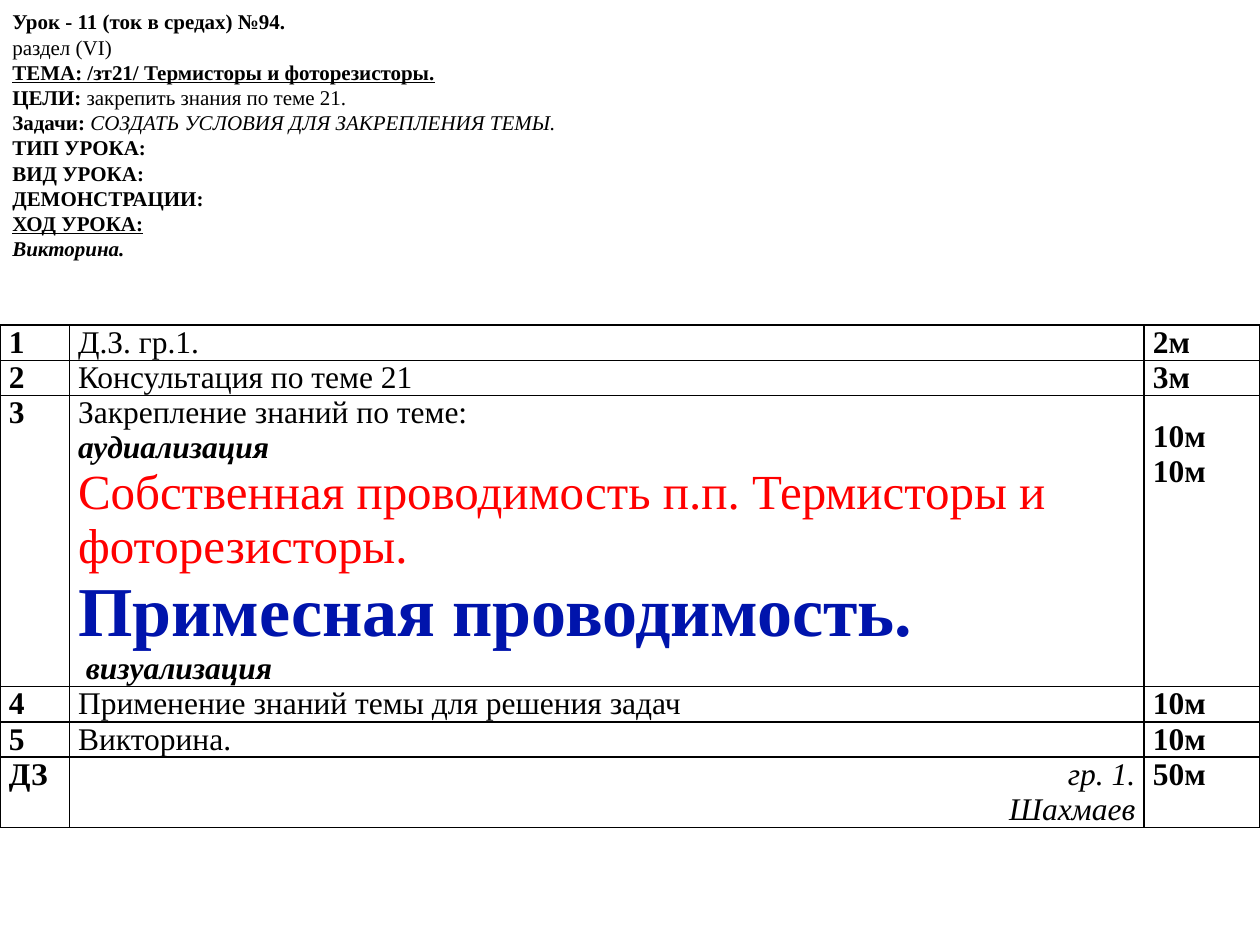
from lxml import etree
from pptx import Presentation
from pptx.dml.color import RGBColor
from pptx.enum.text import MSO_ANCHOR, PP_ALIGN
from pptx.oxml.ns import qn
from pptx.util import Inches, Pt

TOP = MSO_ANCHOR.TOP
LEFT, RIGHT = PP_ALIGN.LEFT, PP_ALIGN.RIGHT
BLACK = RGBColor(0, 0, 0)
WHITE = RGBColor(255, 255, 255)
RED = RGBColor(255, 0, 0)
BLUE = RGBColor(0, 0x14, 0xAC)
FONT = "Times New Roman"

PLAIN = {}
BOLD = {"bold": True}
ITALIC = {"italic": True}
BOLD_ITALIC = {"bold": True, "italic": True}
HEADING = {"bold": True, "underline": True}
RED_TOPIC = {"size": Pt(28), "color": RED}
BLUE_TOPIC = {"size": Pt(40), "color": BLUE, "bold": True}

LESSON_PLAN = [
    [("Урок - 11 (ток в средах) №94.", BOLD)],
    [("раздел (VI)", PLAIN)],
    [("ТЕМА: /зт21/ Термисторы и фоторезисторы.", HEADING)],
    [("ЦЕЛИ:", BOLD), (" закрепить знания по теме 21.", PLAIN)],
    [("Задачи: ", BOLD), ("СОЗДАТЬ УСЛОВИЯ ДЛЯ ЗАКРЕПЛЕНИЯ ТЕМЫ.", ITALIC)],
    [("ТИП УРОКА:", BOLD)],
    [("ВИД УРОКА:", BOLD)],
    [("ДЕМОНСТРАЦИИ:", BOLD)],
    [("ХОД УРОКА:", HEADING)],
    [("Викторина.", BOLD_ITALIC)],
]
REINFORCEMENT = [
    [("Закрепление знаний по теме:", PLAIN)],
    [("аудиализация", BOLD_ITALIC)],
    [("Собственная проводимость п.п. Термисторы и фоторезисторы.", RED_TOPIC)],
    [("Примесная проводимость.", BLUE_TOPIC)],
    [(" визуализация", BOLD_ITALIC)],
]
HOMEWORK = [[("гр. 1.", ITALIC)], [("Шахмаев", ITALIC)]]
STAGES = [
    ("1", [[("Д.З. гр.1.", PLAIN)]], ["2м"]),
    ("2", [[("Консультация по теме 21", PLAIN)]], ["3м"]),
    ("3", REINFORCEMENT, ["10м", "10м"]),
    ("4", [[("Применение знаний темы для решения задач", PLAIN)]], ["10м"]),
    ("5", [[("Викторина.", PLAIN)]], ["10м"]),
    ("ДЗ", HOMEWORK, ["50м"]),
]
COLUMN_WIDTHS = [0.55, 8.53, 0.92]
ROW_HEIGHTS = [0.28, 0.28, 2.31, 0.28, 0.28, 0.56]


def bold_lines(lines):
    """Turn plain strings into bold paragraphs."""
    return [[(line, BOLD)] for line in lines]


def write_text(frame, paragraphs, size, align=LEFT):
    """Fill a text frame with paragraphs of formatted spans."""
    for index, spans in enumerate(paragraphs):
        para = frame.add_paragraph() if index else frame.paragraphs[0]
        para.alignment = align
        for text, changes in spans:
            span = para.add_run()
            span.text = text
            style = {"name": FONT, "size": size, "color": BLACK, **changes}
            span.font.color.rgb = style.pop("color")
            for name, value in style.items():
                setattr(span.font, name, value)


def add_lesson_plan(page):
    """Add the lesson outline above the table."""
    box = page.shapes.add_textbox(0, 0, Inches(10), Inches(2.42))
    frame = box.text_frame
    layout = {"word_wrap": True, "vertical_anchor": TOP, "margin_top": Inches(0.07)}
    for name, value in layout.items():
        setattr(frame, name, value)
    write_text(frame, LESSON_PLAN, Pt(12))


def draw_borders(cell):
    """Give a cell thin black lines on all sides."""
    properties = cell._tc.get_or_add_tcPr()
    for side in ("a:lnL", "a:lnR", "a:lnT", "a:lnB"):
        line = etree.SubElement(properties, qn(side), w=str(Pt(1)))
        fill = etree.SubElement(line, qn("a:solidFill"))
        etree.SubElement(fill, qn("a:srgbClr"), val=str(BLACK))


def fill_cell(cell, paragraphs, align=LEFT, top=0):
    """Format one table cell and write its text."""
    layout = {
        "margin_left": Inches(0.07),
        "margin_right": Inches(0.07),
        "margin_top": Inches(top),
        "margin_bottom": 0,
        "vertical_anchor": TOP,
    }
    for name, value in layout.items():
        setattr(cell, name, value)
    draw_borders(cell)
    cell.fill.solid()
    cell.fill.fore_color.rgb = WHITE
    write_text(cell.text_frame, paragraphs, Pt(18), align)


def add_stages(page):
    """Add the table of lesson stages with their durations."""
    table = page.shapes.add_table(
        len(STAGES), len(COLUMN_WIDTHS), 0, Inches(2.58),
        Inches(sum(COLUMN_WIDTHS)), Inches(sum(ROW_HEIGHTS)),
    ).table
    table.first_row = table.horz_banding = False
    for column, width in zip(table.columns, COLUMN_WIDTHS):
        column.width = Inches(width)
    for row, height, stage in zip(table.rows, ROW_HEIGHTS, STAGES):
        number, activity, durations = stage
        row.height = Inches(height)
        number_cell, activity_cell, duration_cell = row.cells
        fill_cell(number_cell, bold_lines([number]))
        fill_cell(activity_cell, activity, RIGHT if activity is HOMEWORK else LEFT)
        fill_cell(duration_cell, bold_lines(durations), top=0.19 if len(durations) > 1 else 0)


def main():
    """Build the lesson plan slide and save it."""
    deck = Presentation()
    deck.slide_width, deck.slide_height = Inches(10), Inches(7.5)
    page = deck.slides.add_slide(deck.slide_layouts[6])
    add_stages(page)
    add_lesson_plan(page)
    deck.save("out.pptx")


if __name__ == "__main__":
    main()
